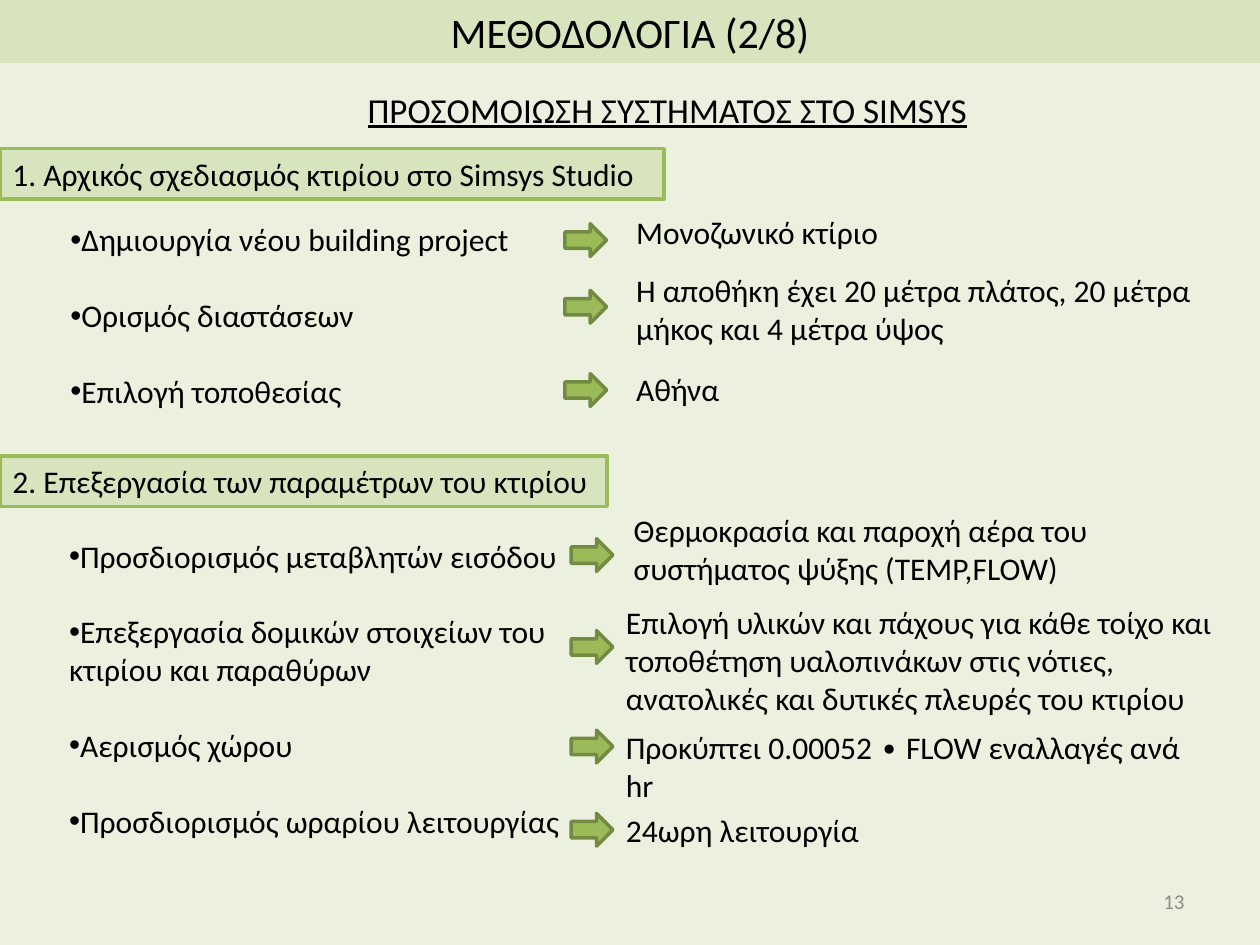
from dataclasses import dataclass

from lxml import etree
from pptx import Presentation
from pptx.dml.color import RGBColor
from pptx.enum import shapes, text
from pptx.oxml import ns
from pptx.util import Pt


@dataclass(frozen=True)
class Theme:
    font: str = "Calibri"
    background: str = "EBF1DE"
    band: str = "D7E4BD"
    accent: str = "9BBB59"
    arrow_edge: str = "738A42"
    ink: str = "000000"
    muted: str = "8C8C8C"
    title: float = 24
    subtitle: float = 20
    body: float = 18
    number: float = 12
    edge: float = 2
    bullet_gap: float = 21.7


THEME = Theme()
ARROW_WIDTH, ARROW_HEIGHT = 18.7, 23.8

# Each answer: left, top, width, height, wraps, words
SECTIONS = [
    dict(
        heading="1. Αρχικός σχεδιασμός κτιρίου στο Simsys Studio",
        heading_box=(0, 85, 379.4, 28.8),
        steps=["Δημιουργία νέου building project", "Ορισμός διαστάσεων",
               "Επιλογή τοποθεσίας"],
        steps_box=(33.1, 122.4, 267.8, 138.2),
        arrow_left=325.4,
        arrow_tops=[125.3, 163.4, 211],
        answers=[
            (356.4, 118.1, 154.8, 28.8, False, "Μονοζωνικό κτίριο"),
            (356.4, 151.2, 360, 51.1, True,
             "Η αποθήκη έχει 20 μέτρα πλάτος, 20 μέτρα μήκος και 4 μέτρα ύψος"),
            (356.4, 208.1, 62.6, 28.8, False, "Αθήνα"),
        ],
    ),
    dict(
        heading="2. Επεξεργασία των παραμέτρων του κτιρίου",
        heading_box=(0, 260.6, 347, 28.8),
        steps=["Προσδιορισμός μεταβλητών εισόδου",
               "Επεξεργασία δομικών στοιχείων του κτιρίου και παραθύρων",
               "Αερισμός χώρου", "Προσδιορισμός ωραρίου λειτουργίας"],
        steps_box=(32.4, 303.1, 294.5, 203.8),
        arrow_left=329,
        arrow_tops=[305.3, 357.8, 414.7, 462.2],
        answers=[
            (355, 288.7, 350.6, 52.6, True,
             "Θερμοκρασία και παροχή αέρα του συστήματος ψύξης (TEMP,FLOW)"),
            (350.6, 341.3, 360, 72.7, True,
             "Επιλογή υλικών και πάχους για κάθε τοίχο και τοποθέτηση υαλοπινάκων "
             "στις νότιες, ανατολικές και δυτικές πλευρές του κτιρίου"),
            (350.6, 412.6, 348.5, 28.8, True,
             "Προκύπτει 0.00052 ∙ FLOW εναλλαγές ανά hr"),
            (350.6, 460.1, 149, 28.8, False, "24ωρη λειτουργία"),
        ],
    ),
]


def apply(target, values):
    for name, value in values.items():
        setattr(target, name, value)


def points(box):
    return [Pt(length) for length in box]


def write(frame, lines, size=THEME.body, color=THEME.ink, underline=None,
          align=text.PP_ALIGN.LEFT, bullets=False, **frame_format):
    """Fill a text frame with one paragraph for each line."""
    apply(frame, dict(word_wrap=True, vertical_anchor=text.MSO_ANCHOR.TOP)
          | frame_format)
    for index, line in enumerate(lines):
        paragraph = frame.add_paragraph() if index else frame.paragraphs[0]
        paragraph.alignment = align
        run = paragraph.add_run()
        run.text = line
        apply(run.font, dict(name=THEME.font, size=Pt(size), underline=underline))
        run.font.color.rgb = RGBColor.from_string(color)
        if bullets:
            paragraph.space_before = Pt(THEME.bullet_gap if index else 0)
            properties = paragraph._p.get_or_add_pPr()
            etree.SubElement(properties, ns.qn("a:buFont"), typeface="Arial")
            etree.SubElement(properties, ns.qn("a:buChar"), char="•")


def add_text(slide, box, lines, **format_values):
    write(slide.shapes.add_textbox(*points(box)).text_frame, lines, **format_values)


def add_block(slide, kind, box, fill, edge=None):
    block = slide.shapes.add_shape(kind, *points(box))
    block.shadow.inherit = False
    block.fill.solid()
    block.fill.fore_color.rgb = RGBColor.from_string(fill)
    if edge:
        block.line.color.rgb = RGBColor.from_string(edge)
        block.line.width = Pt(THEME.edge)
    else:
        block.line.fill.background()
    return block


def add_arrow(slide, left, top):
    arrow = add_block(slide, shapes.MSO_SHAPE.DOWN_ARROW,
                      (left, top, ARROW_WIDTH, ARROW_HEIGHT),
                      THEME.accent, THEME.arrow_edge)
    arrow.rotation = 270


def add_section(slide, section):
    heading = add_block(slide, shapes.MSO_SHAPE.RECTANGLE, section["heading_box"],
                        THEME.band, THEME.accent)
    write(heading.text_frame, [section["heading"]])
    add_text(slide, section["steps_box"], section["steps"], bullets=True,
             margin_right=0)
    for top in section["arrow_tops"]:
        add_arrow(slide, section["arrow_left"], top)
    for *box, wraps, words in section["answers"]:
        add_text(slide, box, [words], word_wrap=wraps)


def main():
    deck = Presentation()
    apply(deck, dict(slide_width=Pt(720), slide_height=Pt(540)))
    slide = deck.slides.add_slide(deck.slide_layouts[6])
    slide.background.fill.solid()
    slide.background.fill.fore_color.rgb = RGBColor.from_string(THEME.background)

    title = add_block(slide, shapes.MSO_SHAPE.RECTANGLE, (0, 0, 720, 36), THEME.band)
    write(title.text_frame, ["ΜΕΘΟΔΟΛΟΓΙΑ (2/8)"], size=THEME.title,
          align=text.PP_ALIGN.CENTER, vertical_anchor=text.MSO_ANCHOR.MIDDLE)
    add_text(slide, (203, 46.8, 366.5, 31.7), ["ΠΡΟΣΟΜΟΙΩΣΗ ΣΥΣΤΗΜΑΤΟΣ ΣΤΟ SIMSYS"],
             size=THEME.subtitle, underline=True)
    for section in SECTIONS:
        add_section(slide, section)
    add_text(slide, (516.2, 500.4, 167.8, 28.8), ["13"], size=THEME.number,
             color=THEME.muted, align=text.PP_ALIGN.RIGHT,
             vertical_anchor=text.MSO_ANCHOR.MIDDLE)
    deck.save("out.pptx")


if __name__ == "__main__":
    main()
